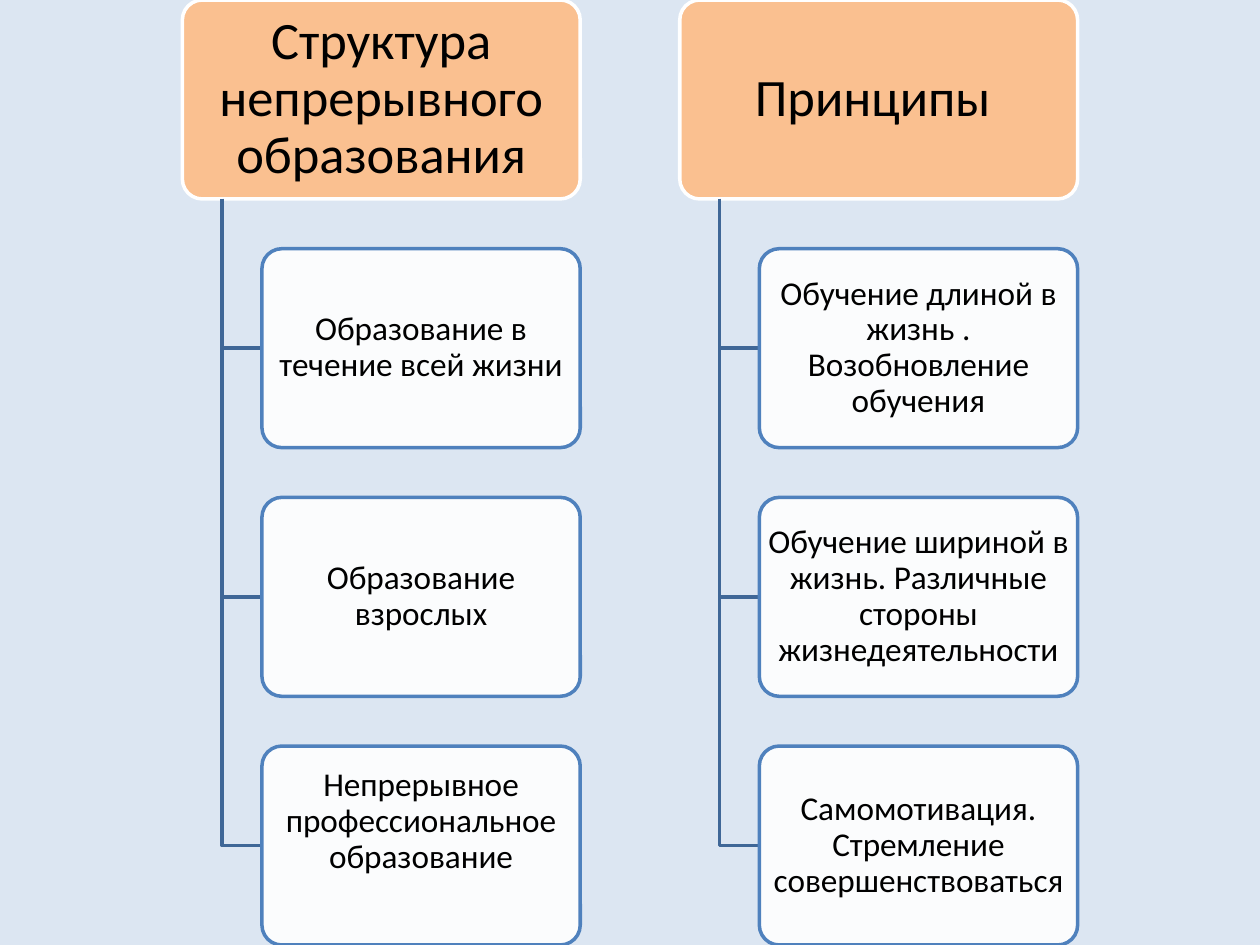
from lxml import etree
from pptx import Presentation
from pptx.dml.color import RGBColor
from pptx.enum import shapes, text
from pptx.oxml import ns
from pptx.util import Pt

BACKGROUND = RGBColor(0xDC, 0xE6, 0xF2)
PEACH = RGBColor(0xFA, 0xC0, 0x90)
WHITE = RGBColor(0xFF, 0xFF, 0xFF)
BLACK = RGBColor(0, 0, 0)
BLUE = RGBColor(0x4F, 0x81, 0xBD)
DARK_BLUE = RGBColor(0x3F, 0x67, 0x97)

SLIDE_W, SLIDE_H = 720, 540
TRAILING_GAP = 27.5

COLUMNS = [
    ("Структура непрерывного образования", [
        ("Образование в течение всей жизни", 0),
        ("Образование взрослых", 0),
        ("Непрерывное профессиональное образование", TRAILING_GAP),
    ]),
    ("Принципы ", [
        ("Обучение длиной в жизнь . Возобновление обучения", 0),
        ("Обучение шириной в жизнь. Различные стороны жизнедеятельности", 0),
        ("Самомотивация. Стремление совершенствоваться", 0),
    ]),
]


def write_text(sp, words, *, size, side=0, bottom=0):
    tf = sp.text_frame
    tf.word_wrap = True
    tf.vertical_anchor = text.MSO_ANCHOR.MIDDLE
    tf.margin_left = tf.margin_right = Pt(side)
    tf.margin_top, tf.margin_bottom = 0, Pt(bottom)
    p = tf.paragraphs[0]
    p.alignment = text.PP_ALIGN.CENTER
    p.line_spacing = 0.9
    r = p.add_run()
    r.text = words
    r.font.name = "Calibri"
    r.font.size = Pt(size)
    r.font.color.rgb = BLACK


def add_card(slide, left, top, width, height, *, fill, line, alpha=100):
    sp = slide.shapes.add_shape(shapes.MSO_SHAPE.ROUNDED_RECTANGLE,
                                Pt(left), Pt(top), Pt(width), Pt(height))
    sp.adjustments[0] = 0.1
    sp.shadow.inherit = False
    sp.fill.solid()
    sp.fill.fore_color.rgb = fill
    if alpha < 100:
        color = sp.fill._xPr.find(".//" + ns.qn("a:srgbClr"))
        etree.SubElement(color, ns.qn("a:alpha"), val=str(alpha * 1000))
    sp.line.color.rgb = line
    sp.line.width = Pt(2)
    return sp


def add_branch(slide, left, top, width, height):
    builder = slide.shapes.build_freeform(Pt(left), Pt(top))
    builder.add_line_segments([(Pt(left), Pt(top + height)),
                               (Pt(left + width), Pt(top + height))], close=False)
    sp = builder.convert_to_shape()
    sp.shadow.inherit = False
    sp.fill.background()
    sp.line.color.rgb = DARK_BLUE
    sp.line.width = Pt(2)


def add_column(slide, left, top, width, height, heading, items):
    card_h = height / (1 + 1.25 * len(items))
    indent = width / 10
    header = add_card(slide, left, top, width, card_h, fill=PEACH, line=WHITE)
    write_text(header, heading, size=30, side=1)
    for i, (words, bottom) in enumerate(items, 1):
        y = top + i * 1.25 * card_h
        add_branch(slide, left + indent, top + card_h, indent, y - top - card_h / 2)
        card = add_card(slide, left + 2 * indent, y, width - 2 * indent, card_h,
                        fill=WHITE, line=BLUE, alpha=90)
        write_text(card, words, size=19, bottom=bottom)


def main():
    prs = Presentation()
    prs.slide_width, prs.slide_height = Pt(SLIDE_W), Pt(SLIDE_H)
    slide = prs.slides.add_slide(prs.slide_layouts[6])
    slide.background.fill.solid()
    slide.background.fill.fore_color.rgb = BACKGROUND

    width = 227.37
    gap = width / 4
    left = (SLIDE_W - 2 * width - gap) / 2
    for i, (heading, items) in enumerate(COLUMNS):
        add_column(slide, left + i * (width + gap), 0, width, SLIDE_H, heading, items)
    prs.save("out.pptx")


if __name__ == "__main__":
    main()
